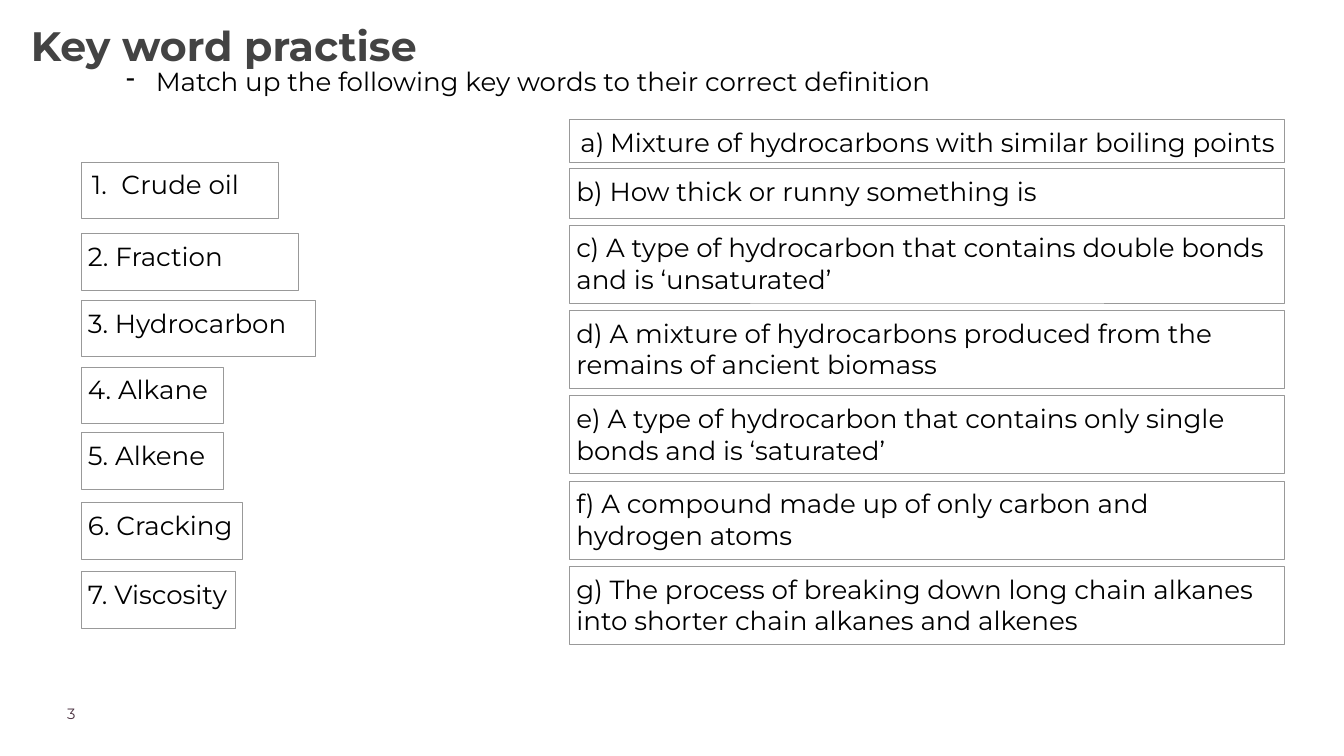
from dataclasses import dataclass
from typing import Optional

from lxml.etree import SubElement
from pptx import Presentation
from pptx.dml.color import RGBColor
from pptx.enum.shapes import MSO_SHAPE as Shape
from pptx.enum.text import MSO_ANCHOR as Anchor, PP_ALIGN as Align
from pptx.oxml.ns import qn
from pptx.util import Inches, Pt

COLORS = {"title": "434343", "text": "000000", "number": "4B3241", "border": "999999"}
FONT = "Montserrat"
BODY_SIZE = 28


@dataclass
class Bullet:
    tag: str
    attribute: str
    value: str


@dataclass
class Card:
    text: str
    left: float
    top: float
    width: float
    height: float
    bullet: Optional[Bullet] = None


def color(name: str) -> RGBColor:
    return RGBColor.from_string(COLORS[name])


def add_bullet(para, bullet: Bullet) -> None:
    """Give the paragraph a hanging indent and a bullet or automatic number."""
    properties = para._p.get_or_add_pPr()
    properties.set("marL", str(Inches(0.5)))
    properties.set("indent", str(Inches(-0.44)))
    bullet_color = SubElement(properties, qn("a:buClr"))
    SubElement(bullet_color, qn("a:srgbClr")).set("val", COLORS["text"])
    SubElement(properties, qn(bullet.tag)).set(bullet.attribute, bullet.value)


def write_text(box, text: str, size: float, color_name: str, inset: float,
               bold: bool = False, bullet: Optional[Bullet] = None):
    frame = box.text_frame
    frame.word_wrap = True
    frame.vertical_anchor = Anchor.TOP
    frame.margin_left = frame.margin_right = Inches(inset)
    frame.margin_top = frame.margin_bottom = Inches(inset)
    frame.text = text
    para = frame.paragraphs[0]
    para.alignment = Align.LEFT
    if bullet:
        add_bullet(para, bullet)
    font = para.runs[0].font
    font.name, font.size, font.bold = FONT, Pt(size), bold
    font.color.rgb = color(color_name)
    return para


def add_text_box(slide, left: float, top: float, width: float, height: float):
    return slide.shapes.add_textbox(Inches(left), Inches(top), Inches(width), Inches(height))


def add_card(slide, card: Card) -> None:
    box = slide.shapes.add_shape(Shape.RECTANGLE, Inches(card.left), Inches(card.top),
                                 Inches(card.width), Inches(card.height))
    box.shadow.inherit = False
    box.fill.background()
    box.line.color.rgb = color("border")
    box.line.width = Pt(0.75)
    write_text(box, card.text, BODY_SIZE, "text", 0.1, bullet=card.bullet)


KEY_WORD_LEFT, KEY_WORD_HEIGHT = 1.21, 0.84
KEY_WORDS = [
    ("2. Fraction", 3.48, 3.23),
    ("3. Hydrocarbon", 4.47, 3.48),
    ("4. Alkane", 5.46, 2.11),
    ("5. Alkene", 6.44, 2.11),
    ("6. Cracking", 7.48, 2.39),
    ("7. Viscosity", 8.51, 2.29),
]

DEFINITION_LEFT, DEFINITION_WIDTH = 8.48, 10.64
LONG_TOP, LONG_HEIGHT, LONG_PITCH = 3.35, 1.16, 1.27
LONG_DEFINITIONS = [
    "c) A type of hydrocarbon that contains double bonds and is ‘unsaturated’",
    "d) A mixture of hydrocarbons produced from the remains of ancient biomass",
    "e) A type of hydrocarbon that contains only single bonds and is ‘saturated’",
    "f) A compound made up of only carbon and hydrogen atoms",
    "g) The process of breaking down long chain alkanes into shorter chain alkanes and alkenes",
]


def key_word_cards() -> list[Card]:
    first = Card("Crude oil", KEY_WORD_LEFT, 2.41, 2.93, KEY_WORD_HEIGHT,
                 Bullet("a:buAutoNum", "type", "arabicPeriod"))
    return [first] + [Card(text, KEY_WORD_LEFT, top, width, KEY_WORD_HEIGHT)
                      for text, top, width in KEY_WORDS]


def definition_cards() -> list[Card]:
    short = [
        Card("Mixture of hydrocarbons with similar boiling points",
             DEFINITION_LEFT, 1.78, DEFINITION_WIDTH, 0.63,
             Bullet("a:buAutoNum", "type", "alphaLcParenR")),
        Card("b) How thick or runny something is",
             DEFINITION_LEFT, 2.51, DEFINITION_WIDTH, 0.74),
    ]
    return short + [Card(text, DEFINITION_LEFT, LONG_TOP + row * LONG_PITCH,
                         DEFINITION_WIDTH, LONG_HEIGHT)
                    for row, text in enumerate(LONG_DEFINITIONS)]


def main() -> None:
    deck = Presentation()
    deck.slide_width, deck.slide_height = Inches(20), Inches(11.25)
    slide = deck.slides.add_slide(deck.slide_layouts[6])

    title = add_text_box(slide, 0.46, 0.2, 14.44, 1.78)
    write_text(title, "Key word practise", 44, "title", 0, bold=True).line_spacing = 1.15
    page_number = add_text_box(slide, 1, 10.48, 1.57, 0.39)
    write_text(page_number, "3", 16, "number", 0)
    instruction = add_text_box(slide, 1.72, 0.88, 17.27, 0.74)
    write_text(instruction, "Match up the following key words to their correct definition",
               BODY_SIZE, "text", 0.1, bullet=Bullet("a:buChar", "char", "-"))

    for card in key_word_cards() + definition_cards():
        add_card(slide, card)
    deck.save("out.pptx")


if __name__ == "__main__":
    main()
